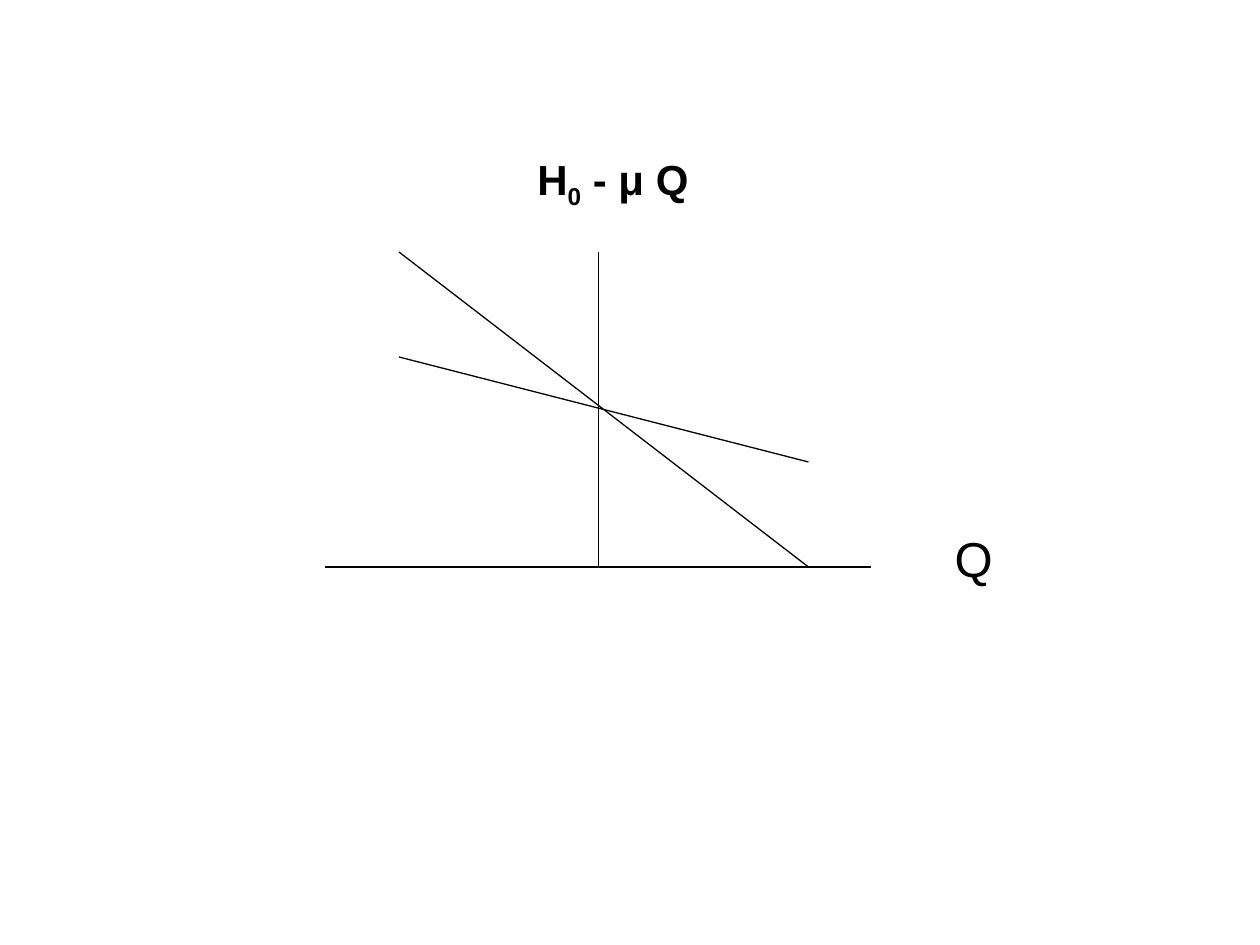
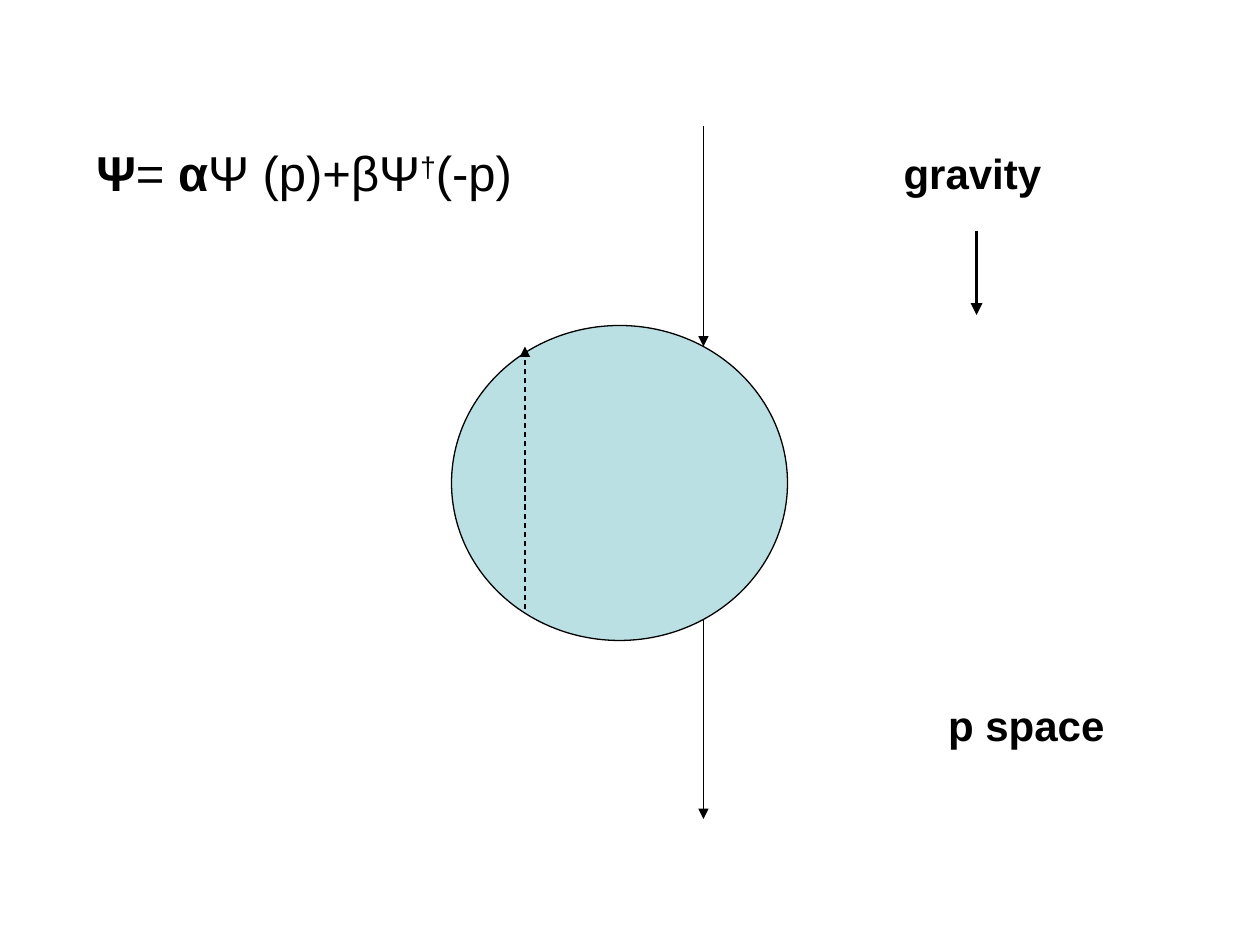
from lxml import etree
from pptx import Presentation
from pptx import util as u
from pptx.dml.color import RGBColor
from pptx.enum import dml, shapes, text
from pptx.oxml import ns

PX = 9525  # EMU, 96 px to the inch
INK = {"black": "000000", "aqua": "BBE0E3"}
FONT = "Arial"


def px(*nums):
    return [u.Emu(round(n * PX)) for n in nums]


def tint(name):
    return RGBColor.from_string(INK[name])


def pen(item, width=0.75):
    item.line.color.rgb = tint("black")
    item.line.width = u.Pt(width)


def line(slide, start, end, width=0.75, head=False, dash=False):
    link = slide.shapes.add_connector(
        shapes.MSO_CONNECTOR.STRAIGHT, *px(*start, *end))
    pen(link, width)
    if dash:
        link.line.dash_style = dml.MSO_LINE.DASH
    if head:
        tail = etree.SubElement(link.line._get_or_add_ln(), ns.qn("a:tailEnd"))
        tail.set("type", "triangle")
    etree.SubElement(link._element.spPr, ns.qn("a:effectLst"))


def write(slide, box, *parts, size=24, bold=True, wrap=False):
    """Each part is a string, or a tuple of string and format changes."""
    frame = slide.shapes.add_textbox(*px(*box)).text_frame
    frame.word_wrap = wrap
    frame.auto_size = text.MSO_AUTO_SIZE.SHAPE_TO_FIT_TEXT
    for part in parts:
        words, form = (part, {}) if isinstance(part, str) else part
        run = frame.paragraphs[0].add_run()
        run.text = words
        run.font.name = FONT
        run.font.size = u.Pt(size)
        run.font.bold = form.get("bold", bold)
        run.font.color.rgb = tint("black")
        if "shift" in form:  # percent above or below the baseline
            run._r.get_or_add_rPr().set("baseline", str(form["shift"] * 1000))


def graph(slide, x, y, w, h):
    """Two levels that cross on the vertical axis, with axis labels."""
    mid, left, right = x + w / 2, x + 56, x + 368
    line(slide, (x, y + h), (x + w, y + h))
    line(slide, (mid, y), (mid, y + h))
    for drop in (h / 3, 0):
        line(slide, (left, y + drop), (right, y + h - drop))
    write(slide, (x + w + 54, y + h - 34, 48, 55), "Q", size=28, bold=False)
    write(slide, (x + 152, y - 80, 136, 48),
          "H", ("0", {"shift": -25}), " - μ Q")


def ball(slide, x, y, w, h):
    """Ball with a path in, a path out and a dashed path back."""
    disc = slide.shapes.add_shape(shapes.MSO_SHAPE.OVAL, *px(x, y, w, h))
    disc.shadow.inherit = False
    disc.fill.solid()
    disc.fill.fore_color.rgb = tint("aqua")
    pen(disc)
    path, back, edge, reach = x + w * 3 / 4, x + 56, 16, 152
    line(slide, (path, y - reach), (path, y + edge), head=True)
    line(slide, (back, y + h - 24), (back, y + edge), head=True, dash=True)
    line(slide, (path, y + h - edge), (path, y + h + reach - edge), head=True)


def pull(slide, x, y, w, h):
    """Label over a heavy arrow that points down."""
    write(slide, (x, y, w, 48), "gravity", wrap=True)
    mid = x + w / 2
    line(slide, (mid, y + 68), (mid, y + h), width=2.25, head=True)


def wave(slide, x, y, w, h):
    write(slide, (x, y, w, h), ("Ψ", {"bold": True}), "= ",
          ("α", {"bold": True}), "Ψ (p)+βΨ", ("†", {"shift": 30}), "(-p)",
          size=28, bold=False)


def main():
    deck = Presentation()
    deck.slide_width, deck.slide_height = px(960, 720)
    blank = deck.slide_layouts[6]

    graph(deck.slides.add_slide(blank), 248, 192, 416, 240)

    fall = deck.slides.add_slide(blank)
    ball(fall, 344, 248, 256, 240)
    write(fall, (704, 528, 147, 48), " p space")
    pull(fall, 679, 108, 130, 132)
    wave(fall, 64, 104, 361, 55)

    deck.save("out.pptx")


if __name__ == "__main__":
    main()
